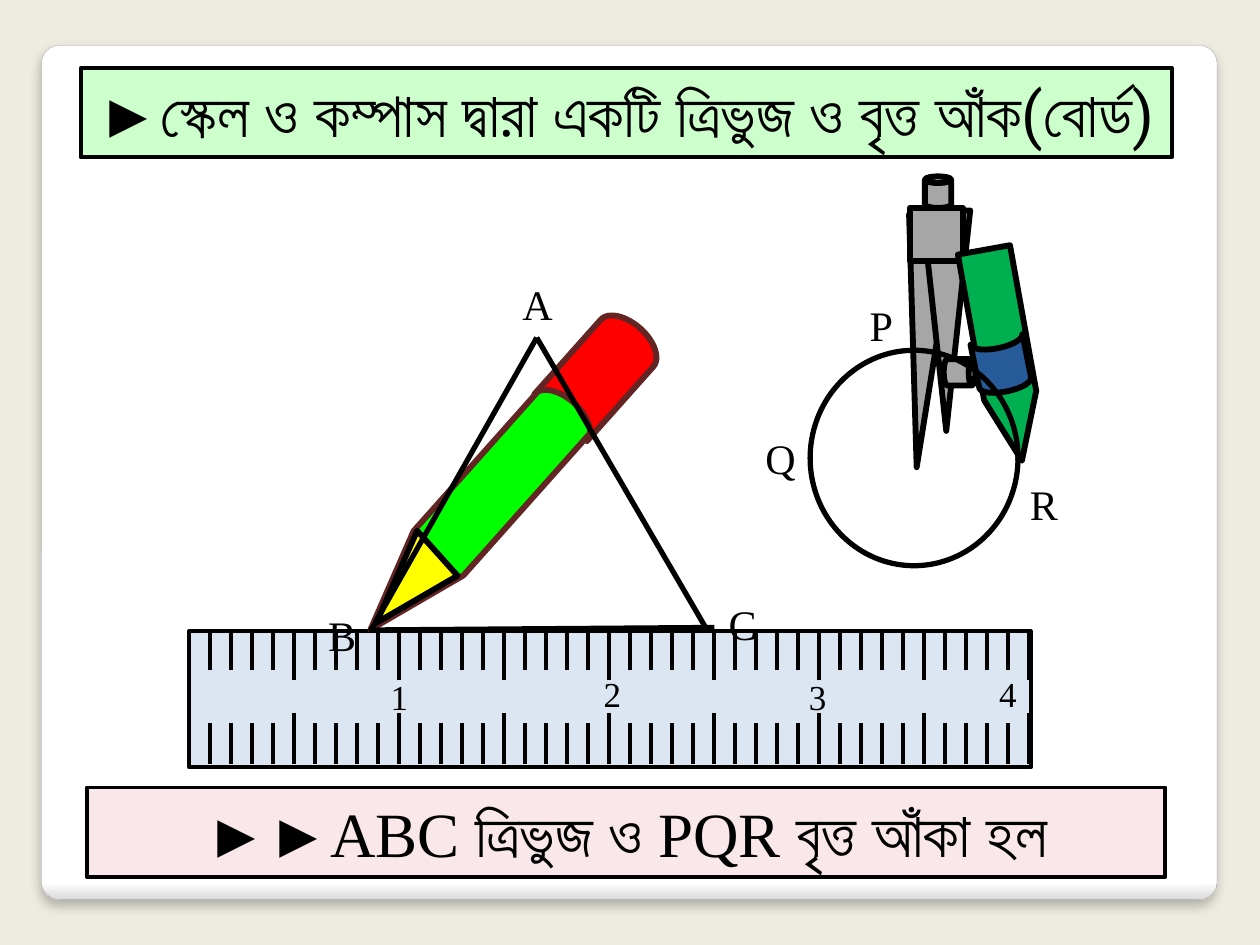
from lxml import etree
from pptx import Presentation
from pptx.dml.color import RGBColor
from pptx.enum.shapes import MSO_CONNECTOR, MSO_SHAPE
from pptx.enum.text import MSO_ANCHOR, PP_ALIGN
from pptx.oxml import parse_xml
from pptx.oxml.ns import nsdecls, qn
from pptx.util import Inches, Pt

COLUMNS, ROWS = 10, 7.5
CELL = Inches(1)
LATIN, BENGALI = "Times New Roman", "Roboto"
BLACK, WHITE, GREY, BROWN = "000000", "FFFFFF", "A6A6A6", "632523"
STRAIGHT = MSO_CONNECTOR.STRAIGHT
CENTER, MIDDLE = PP_ALIGN.CENTER, MSO_ANCHOR.MIDDLE
RECTANGLE, ROUNDED = MSO_SHAPE.RECTANGLE, MSO_SHAPE.ROUNDED_RECTANGLE
PROCESS, MERGE = MSO_SHAPE.FLOWCHART_PROCESS, MSO_SHAPE.FLOWCHART_MERGE
STORAGE = MSO_SHAPE.FLOWCHART_STORED_DATA
PENTAGON, TRIANGLE = MSO_SHAPE.PENTAGON, MSO_SHAPE.ISOSCELES_TRIANGLE
CUBE, CAN, ARC = MSO_SHAPE.CUBE, MSO_SHAPE.CAN, MSO_SHAPE.ARC
THICK, MEDIUM, THIN = 3.35, 3, 2.25


def color(value):
    return RGBColor.from_string(value)


def grid(*cells):
    return [round(cell * CELL) for cell in cells]


def set_outline(line, width, shade=BLACK):
    line.color.rgb = color(shade)
    line.width = Pt(width)


def add_figure(shapes, kind, place, fill=None, line=BLACK, width=THICK,
               turn=0, adjust=()):
    figure = shapes.add_shape(kind, *grid(*place))
    figure.shadow.inherit = False
    figure.rotation = turn
    for index, value in enumerate(adjust):
        figure.adjustments[index] = value
    if fill:
        figure.fill.solid()
        figure.fill.fore_color.rgb = color(fill)
    else:
        figure.fill.background()
    set_outline(figure.line, width, line)
    return figure


def add_line(shapes, start, end, width=MEDIUM):
    connector = shapes.add_connector(STRAIGHT, *grid(*start, *end))
    set_outline(connector.line, width)
    etree.SubElement(connector._element.spPr, qn("a:effectLst"))


def add_span(para, text, size=24, font=LATIN, shade=BLACK):
    span = para.add_run()
    span.text = text
    span.font.size = Pt(size)
    span.font.name = font
    span.font.color.rgb = color(shade)
    etree.SubElement(span._r.get_or_add_rPr(), qn("a:cs")).set("typeface", font)


def add_label(shapes, text, left, top, width, height=0.5, size=24):
    box = shapes.add_textbox(*grid(left, top, width, height))
    box.text_frame.word_wrap = False
    para = box.text_frame.paragraphs[0]
    para.alignment = CENTER
    add_span(para, text, size)


def fill_banner(box, spans, wrap):
    frame = box.text_frame
    frame.word_wrap = wrap
    frame.vertical_anchor = MIDDLE
    para = frame.paragraphs[0]
    para.alignment = CENTER
    for text, font in spans:
        add_span(para, text, size=36, font=font)


def add_card(shapes):
    card = add_figure(shapes, ROUNDED, (0.33, 0.36, 9.33, 6.78), WHITE,
                      "A4A4A4", 0.16, adjust=[0.021])
    card.fill.gradient()
    card.fill.gradient_angle = 270
    for stop, position, shade in zip(card.fill.gradient_stops, (0.98, 1),
                                     (WHITE, "DADADA")):
        stop.position = position
        stop.color.rgb = color(shade)
    effects = card._element.spPr.find(qn("a:effectLst"))
    effects.append(parse_xml(
        f'<a:outerShdw {nsdecls("a")} blurRad="{Pt(6)}" dist="{Pt(4)}" '
        'dir="5400000" algn="t" rotWithShape="0">'
        f'<a:srgbClr val="{BLACK}"><a:alpha val="25000"/></a:srgbClr>'
        '</a:outerShdw>'))


def add_ruler(shapes):
    add_figure(shapes, PROCESS, (1.5, 5.01, 6.68, 1.08), "DCE6F2", width=THIN)
    for tick in range(40):
        x = 1.67 + tick / 6
        length = 0.4 if tick % 5 == 4 else 0.32
        add_line(shapes, (x, 5 + length), (x, 5), THIN)
        add_line(shapes, (x, 6.06), (x, 6.06 - length), THIN)
    for number, left, top in (("1", 3, 5.31), ("2", 4.69, 5.29),
                              ("3", 6.32, 5.31), ("4", 7.83, 5.29)):
        add_label(shapes, number, left, top, 0.34, 0.44, size=20)


def add_pencil(shapes):
    add_figure(shapes, PENTAGON, (2.46, 3.66, 2.87, 0.53), "00FF00", BROWN,
               turn=131.7, adjust=[1.53])
    add_figure(shapes, TRIANGLE, (2.96, 4.27, 0.48, 0.73), "FFFF00",
               turn=228, adjust=[0.32])
    add_figure(shapes, STORAGE, (4.29, 2.68, 0.95, 0.56), "FF0000", BROWN,
               turn=131.7)


def add_triangle(shapes):
    apex = (4.26, 2.68)
    add_line(shapes, (2.93, 5), (5.67, 4.98))
    add_line(shapes, (2.94, 5.01), apex)
    add_line(shapes, (5.6, 4.98), apex)
    add_label(shapes, "A", 4.04, 2.16, 0.45)
    add_label(shapes, "B", 2.5, 4.79, 0.43)
    add_label(shapes, "C", 5.68, 4.7, 0.43)


def add_compass(shapes):
    add_figure(shapes, MERGE, (7.15, 1.71, 0.38, 2), GREY, turn=3.7)
    add_figure(shapes, MERGE, (7.32, 1.67, 0.38, 1.75), GREY)
    add_figure(shapes, CUBE, (7.22, 1.65, 0.42, 0.42), GREY, adjust=[0])
    add_figure(shapes, CAN, (7.34, 1.4, 0.21, 0.25), GREY)
    add_figure(shapes, CAN, (7.51, 2.83, 0.21, 0.25), GREY, turn=90)
    add_figure(shapes, PENTAGON, (7.11, 2.61, 1.7, 0.42), "00B050",
               turn=79.8, adjust=[1.25])
    add_figure(shapes, STORAGE, (7.74, 2.69, 0.42, 0.42), "265A99", turn=258.5)


def add_circle(shapes):
    place = (6.43, 2.78, 1.65, 1.71)
    add_figure(shapes, ARC, place, width=MEDIUM, adjust=[108.84, 1])
    lower = add_figure(shapes, ARC, place, width=MEDIUM, adjust=[106.98, 1])
    lower._element.spPr.find(qn("a:xfrm")).set("flipV", "1")
    add_label(shapes, "P", 6.8, 2.33, 0.39)
    add_label(shapes, "Q", 5.97, 3.38, 0.45)
    add_label(shapes, "R", 8.07, 3.75, 0.43)


def add_heading(page):
    title = page.shapes.title
    title.left, title.top, title.width, title.height = grid(0.64, 0.54, 8.66, 0.71)
    title.fill.solid()
    title.fill.fore_color.rgb = color("CDFFCD")
    set_outline(title.line, THIN)
    fill_banner(title, [
        ("►", LATIN),
        ("স্কেল ও কম্পাস দ্বারা একটি ত্রিভুজ ও বৃত্ত আঁক(বোর্ড)", BENGALI),
    ], wrap=False)
    page.shapes._spTree.append(title._element)


def add_result(shapes):
    box = add_figure(shapes, RECTANGLE, (0.69, 6.25, 8.56, 0.71), "F9E7E9",
                     width=THIN)
    fill_banner(box, [("►►ABC", LATIN), (" ত্রিভুজ ও ", BENGALI),
                      ("PQR ", LATIN), ("বৃত্ত আঁকা হল", BENGALI)], wrap=True)


def main():
    deck = Presentation()
    deck.slide_width, deck.slide_height = grid(COLUMNS, ROWS)
    page = deck.slides.add_slide(deck.slide_layouts[5])
    page.background.fill.solid()
    page.background.fill.fore_color.rgb = color("EEECE1")
    shapes = page.shapes
    add_card(shapes)
    add_ruler(shapes.add_group_shape().shapes)
    add_pencil(shapes.add_group_shape().shapes)
    add_triangle(shapes)
    add_heading(page)
    add_result(shapes)
    add_compass(shapes.add_group_shape().shapes)
    add_circle(shapes)
    deck.save("out.pptx")


if __name__ == "__main__":
    main()
